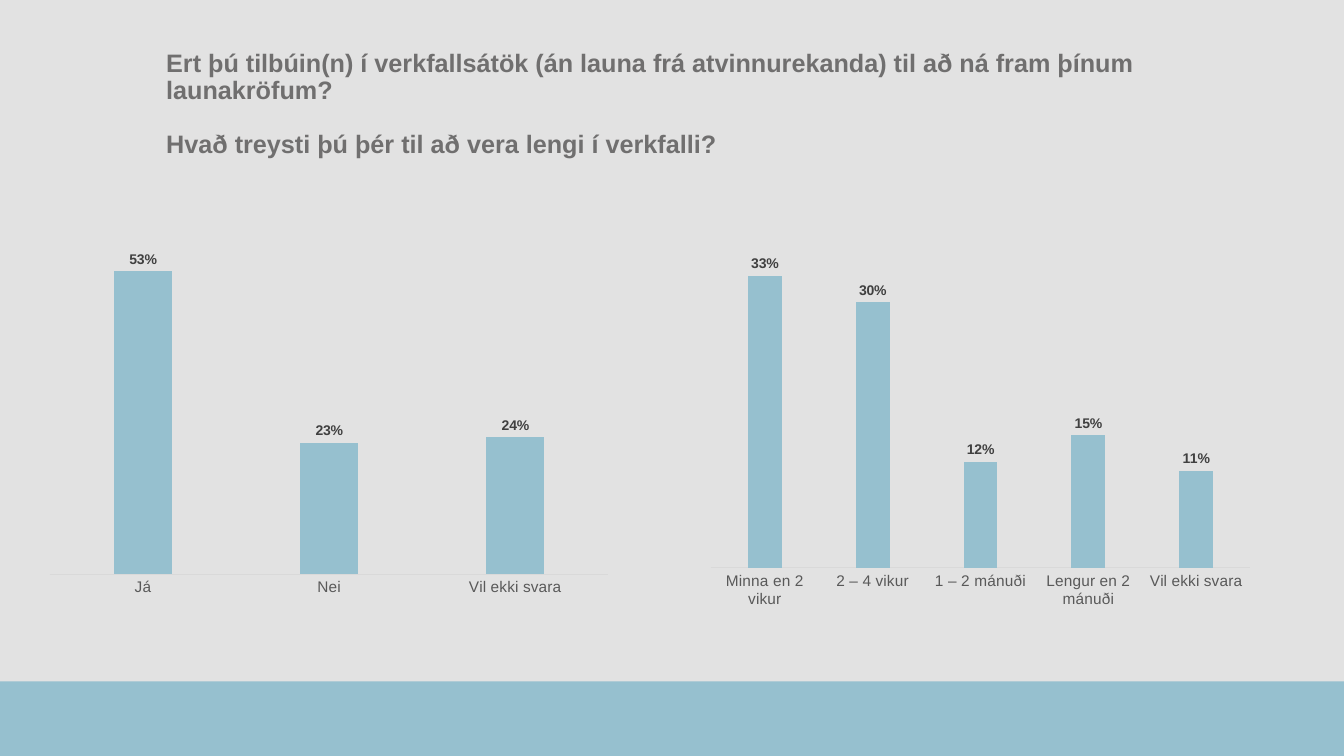
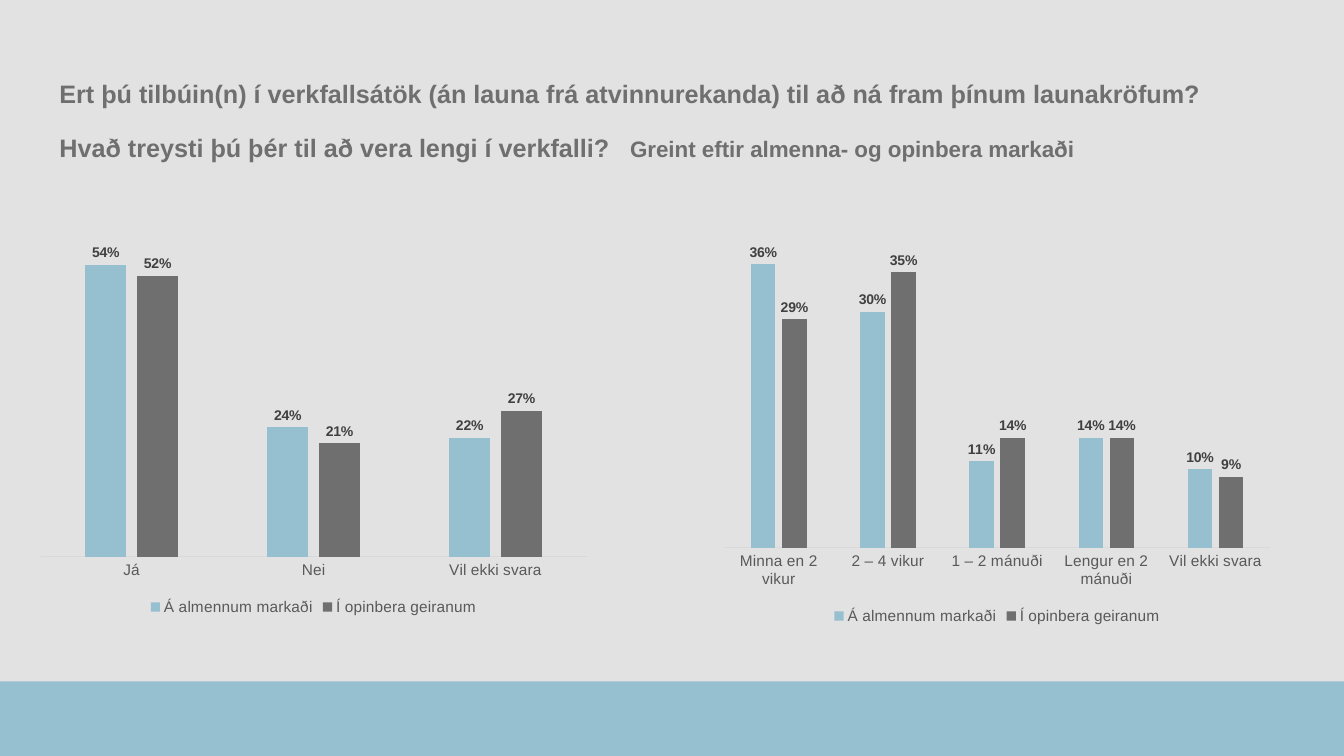
from pptx import Presentation
from pptx.chart.data import CategoryChartData
from pptx.dml.color import RGBColor
from pptx.enum.chart import (XL_CHART_TYPE, XL_LABEL_POSITION,
                             XL_LEGEND_POSITION, XL_TICK_MARK)
from pptx.enum.shapes import MSO_SHAPE
from pptx.enum.text import MSO_ANCHOR
from pptx.oxml import parse_xml
from pptx.oxml.ns import nsdecls
from pptx.util import Inches, Pt

# Shared style
PAPER = RGBColor(0xE2, 0xE2, 0xE2)
BLUE = RGBColor(0x96, 0xC0, 0xCF)
GREY = RGBColor(0x70, 0x6F, 0x6F)
BLACK = RGBColor(0, 0, 0)
DARK = RGBColor(0x40, 0x40, 0x40)
MID = RGBColor(0x59, 0x59, 0x59)
RULE = RGBColor(0xD9, 0xD9, 0xD9)
FONT = "Arial"
WIDTH, HEIGHT, BAND = Inches(13.33), Inches(7.5), Inches(0.74)
NOTE_TAB = Inches(5.66)

# Content
STRIKE = ("Ert þú tilbúin(n) í verkfallsátök (án launa frá atvinnurekanda) "
          "til að ná fram þínum launakröfum?")
LENGTH = "Hvað treysti þú þér til að vera lengi í verkfalli?"
ANSWERS = ["Já", "Nei", "Vil ekki svara"]
SPANS = ["Minna en 2 vikur", "2 – 4 vikur", "1 – 2 mánuði",
         "Lengur en 2 mánuði", "Vil ekki svara"]
PRIVATE, PUBLIC = "Á almennum markaði", "Í opinbera geiranum"

SLIDES = [
    {"title": (1.55, 0.7, 10.24, 0.68), "note": None, "charts": [
        {"at": (0.38, 2.22, 5.77, 3.77), "cats": ANSWERS, "top": 0.6,
         "series": {"Series 1": (0.53, 0.23, 0.24)}},
        {"at": (6.94, 2.49, 5.57, 3.61), "cats": SPANS, "top": 0.35,
         "series": {"Series 1": (0.33, 0.30, 0.12, 0.15, 0.11)}},
    ]},
    {"title": (0.49, 0.87, 11.88, 0.68),
     "note": "Greint eftir almenna- og opinbera markaði", "charts": [
        {"at": (0.29, 2.23, 5.64, 3.92), "cats": ANSWERS, "top": 0.6,
         "series": {PRIVATE: (0.54, 0.24, 0.22),
                    PUBLIC: (0.52, 0.21, 0.27)}},
        {"at": (7.07, 2.23, 5.64, 4.01), "cats": SPANS, "top": 0.4,
         "series": {PRIVATE: (0.36, 0.30, 0.11, 0.14, 0.10),
                    PUBLIC: (0.29, 0.35, 0.14, 0.14, 0.09)}},
    ]},
]


def style(font, size, color, bold=False):
    font.name, font.size, font.bold = FONT, Pt(size), bold
    font.color.rgb = color


def add_band(slide):
    band = slide.shapes.add_shape(MSO_SHAPE.RECTANGLE, 0, HEIGHT - BAND,
                                  WIDTH, BAND)
    band.shadow.inherit = False
    band.fill.solid()
    band.fill.fore_color.rgb = BLUE
    band.line.fill.background()


def add_title(slide, place, note):
    frame = slide.shapes.add_textbox(*map(Inches, place)).text_frame
    frame.word_wrap = True
    frame.vertical_anchor = MSO_ANCHOR.MIDDLE
    first, second = frame.paragraphs[0], frame.add_paragraph()
    first.text, second.text = STRIKE, LENGTH
    second.space_before = Pt(19)
    for para in (first, second):
        para.line_spacing = 0.9
        style(para.runs[0].font, 18, GREY, True)
    if note:
        # The note follows the second question at a tab stop
        tabs = parse_xml(f'<a:tabLst {nsdecls("a")}>'
                         f'<a:tab pos="{NOTE_TAB}" algn="l"/></a:tabLst>')
        second._p.get_or_add_pPr().append(tabs)
        run = second.add_run()
        run.text = "\t" + note
        style(run.font, 16, GREY, True)


def add_columns(slide, at, cats, top, series):
    data = CategoryChartData(number_format="0%")
    data.categories = cats
    for name, values in series.items():
        data.add_series(name, values)
    chart = slide.shapes.add_chart(XL_CHART_TYPE.COLUMN_CLUSTERED,
                                   *map(Inches, at), data).chart
    chart.has_title = False
    style(chart.font, 10, BLACK)

    # Axes
    base, scale = chart.category_axis, chart.value_axis
    base.major_tick_mark = base.minor_tick_mark = XL_TICK_MARK.NONE
    base.format.line.color.rgb = RULE
    base.format.line.width = Pt(0.75)
    style(base.tick_labels.font, 11, MID)
    scale.minimum_scale, scale.maximum_scale = 0, top
    scale.has_major_gridlines = False
    scale.visible = False

    # Columns and their labels
    plot = chart.plots[0]
    plot.gap_width, plot.overlap = 219, -27
    plot.vary_by_categories = False
    for item, color in zip(plot.series, (BLUE, GREY)):
        item.format.fill.solid()
        item.format.fill.fore_color.rgb = color
        labels = item.data_labels
        labels.show_value = True
        labels.number_format, labels.number_format_is_linked = "0%", False
        labels.position = XL_LABEL_POSITION.OUTSIDE_END
        style(labels.font, 10, DARK, True)

    # Legend only where groups are compared
    chart.has_legend = len(series) > 1
    if chart.has_legend:
        chart.legend.position = XL_LEGEND_POSITION.BOTTOM
        chart.legend.include_in_layout = False
        style(chart.legend.font, 11, MID)


def main():
    prs = Presentation()
    prs.slide_width, prs.slide_height = WIDTH, HEIGHT
    paper = prs.slide_master.background.fill
    paper.solid()
    paper.fore_color.rgb = PAPER
    for page in SLIDES:
        slide = prs.slides.add_slide(prs.slide_layouts[6])
        add_band(slide)
        add_title(slide, page["title"], page["note"])
        for chart in page["charts"]:
            add_columns(slide, **chart)
    prs.save("out.pptx")


if __name__ == "__main__":
    main()
